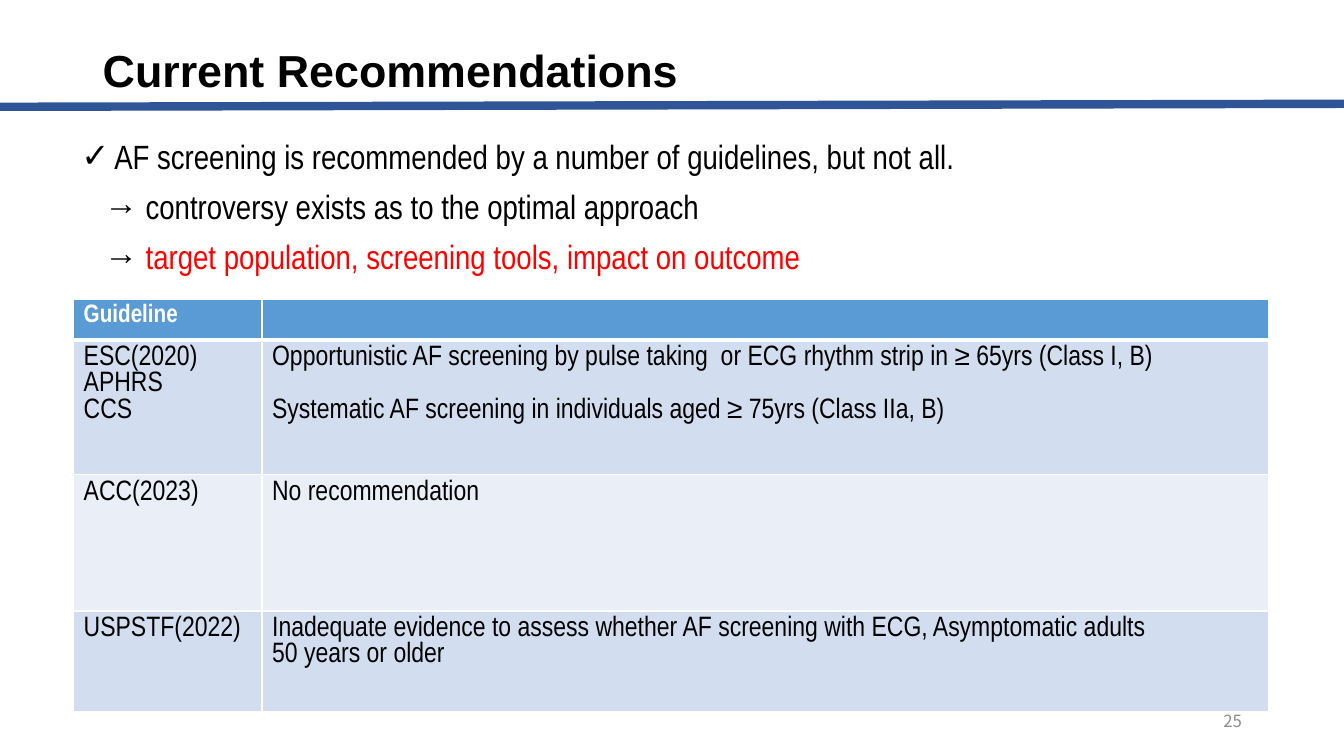
"""Build the slide on current recommendations for AF screening."""
from lxml.etree import SubElement
from pptx import Presentation
from pptx.dml.color import RGBColor
from pptx.enum.shapes import MSO_CONNECTOR
from pptx.enum.text import MSO_ANCHOR, PP_ALIGN
from pptx.oxml.ns import qn
from pptx.util import Inches, Pt

COLORS = {
    "text": "000000",
    "accent": "FF0000",
    "number": "8C8C8C",
    "rule": "2F5597",
    "white": "FFFFFF",
    "header": "5B9BD5",
    "band_dark": "D2DEEF",
    "band_light": "EAEFF7",
}

presentation = Presentation()
presentation.slide_width = Inches(13.33)
presentation.slide_height = Inches(7.5)
COLUMN = presentation.slide_width / 100
ROW = presentation.slide_height / 100
slide = presentation.slides.add_slide(presentation.slide_layouts[6])


def write(paragraph, text, size=20, color="text", font="Arial Narrow", bold=False):
    """Add text to a paragraph, with a line break at each newline."""
    for index, line in enumerate(text.split("\n")):
        if index:
            paragraph.add_line_break()
        run = paragraph.add_run()
        run.text = line
        run.font.size = Pt(size)
        run.font.name = font
        run.font.bold = bold
        run.font.color.rgb = RGBColor.from_string(COLORS[color])


def add_text_frame(left, top, width, height, anchor):
    """Add a wrapping text box measured in grid columns and rows."""
    box = slide.shapes.add_textbox(
        int(left * COLUMN), int(top * ROW), int(width * COLUMN), int(height * ROW)
    )
    box.text_frame.word_wrap = True
    box.text_frame.vertical_anchor = anchor
    return box.text_frame


title = add_text_frame(6.9, 0, 86.25, 19.33, MSO_ANCHOR.MIDDLE).paragraphs[0]
title.line_spacing = 0.9
write(title, "Current Recommendations", size=32, font="Arial", bold=True)

number = add_text_frame(70.65, 92.67, 22.5, 5.33, MSO_ANCHOR.MIDDLE).paragraphs[0]
number.alignment = PP_ALIGN.RIGHT
write(number, "25", size=12, color="number", font="Noto Sans CJK KR")

rule = slide.shapes.add_connector(
    MSO_CONNECTOR.STRAIGHT,
    0, int(14.13 * ROW), presentation.slide_width, int(13.73 * ROW),
)
rule.line.color.rgb = RGBColor.from_string(COLORS["rule"])
rule.line.width = Pt(6)
SubElement(rule._element.spPr, qn("a:effectLst"))

points = [
    ("✓", "AF screening is recommended by a number of guidelines, but not all.", "text"),
    ("", "controversy exists as to the optimal approach", "text"),
    ("", "target population, screening tools, impact on outcome", "accent"),
]
body = add_text_frame(5.32, 17.87, 90.52, 20.5, MSO_ANCHOR.TOP)
for index, (bullet, text, color) in enumerate(points):
    paragraph = body.add_paragraph() if index else body.paragraphs[0]
    paragraph.line_spacing = 0.9
    paragraph.space_before = Pt(10)
    properties = paragraph._p.get_or_add_pPr()
    if bullet:
        properties.set("marL", str(int(2.45 * COLUMN)))
        properties.set("indent", str(int(-2.45 * COLUMN)))
        SubElement(properties, qn("a:buFont"), typeface="Arial")
        SubElement(properties, qn("a:buChar"), char=bullet)
    else:
        properties.set("marL", str(int(1.71 * COLUMN)))
        write(paragraph, "→ ", size=24)
    write(paragraph, text, size=24, color=color)

guidelines = [
    (["Guideline"], []),
    (
        ["ESC(2020)\nAPHRS\nCCS"],
        [
            "Opportunistic AF screening by pulse taking  or ECG rhythm strip in ≥ 65yrs (Class I, B)",
            "Systematic AF screening in individuals aged ≥ 75yrs (Class IIa, B)",
        ],
    ),
    (["ACC(2023)"], ["No recommendation"]),
    (
        ["USPSTF(2022)"],
        [
            "Inadequate evidence to assess whether AF screening with ECG, Asymptomatic adults",
            "50 years or older",
        ],
    ),
]
column_widths = [14.02, 74.92]
row_heights = [5.2, 17.87, 18, 13.33]
row_fills = ["header", "band_dark", "band_light", "band_dark"]

table = slide.shapes.add_table(
    len(row_heights), len(column_widths),
    int(5.48 * COLUMN), int(39.6 * ROW),
    int(sum(column_widths) * COLUMN), int(sum(row_heights) * ROW),
).table
for column, width in zip(table.columns, column_widths):
    column.width = int(width * COLUMN)

for row_index, cells in enumerate(guidelines):
    table.rows[row_index].height = int(row_heights[row_index] * ROW)
    is_header = row_index == 0
    for column_index, lines in enumerate(cells):
        cell = table.cell(row_index, column_index)
        cell_properties = cell._tc.get_or_add_tcPr()
        for side in ("lnL", "lnR", "lnT", "lnB"):
            heavy = (row_index, side) in ((0, "lnB"), (1, "lnT"))
            border = SubElement(
                cell_properties, qn(f"a:{side}"), w=str(Pt(3 if heavy else 1))
            )
            border_fill = SubElement(border, qn("a:solidFill"))
            SubElement(border_fill, qn("a:srgbClr"), val=COLORS["white"])
        cell.fill.solid()
        cell.fill.fore_color.rgb = RGBColor.from_string(COLORS[row_fills[row_index]])
        for line_index, line in enumerate(lines):
            frame = cell.text_frame
            paragraph = frame.add_paragraph() if line_index else frame.paragraphs[0]
            if line.startswith("Systematic"):
                paragraph.space_before = Pt(19)
            write(
                paragraph, line,
                size=18 if is_header else 20,
                color="white" if is_header else "text",
                bold=is_header,
            )

presentation.save("out.pptx")
